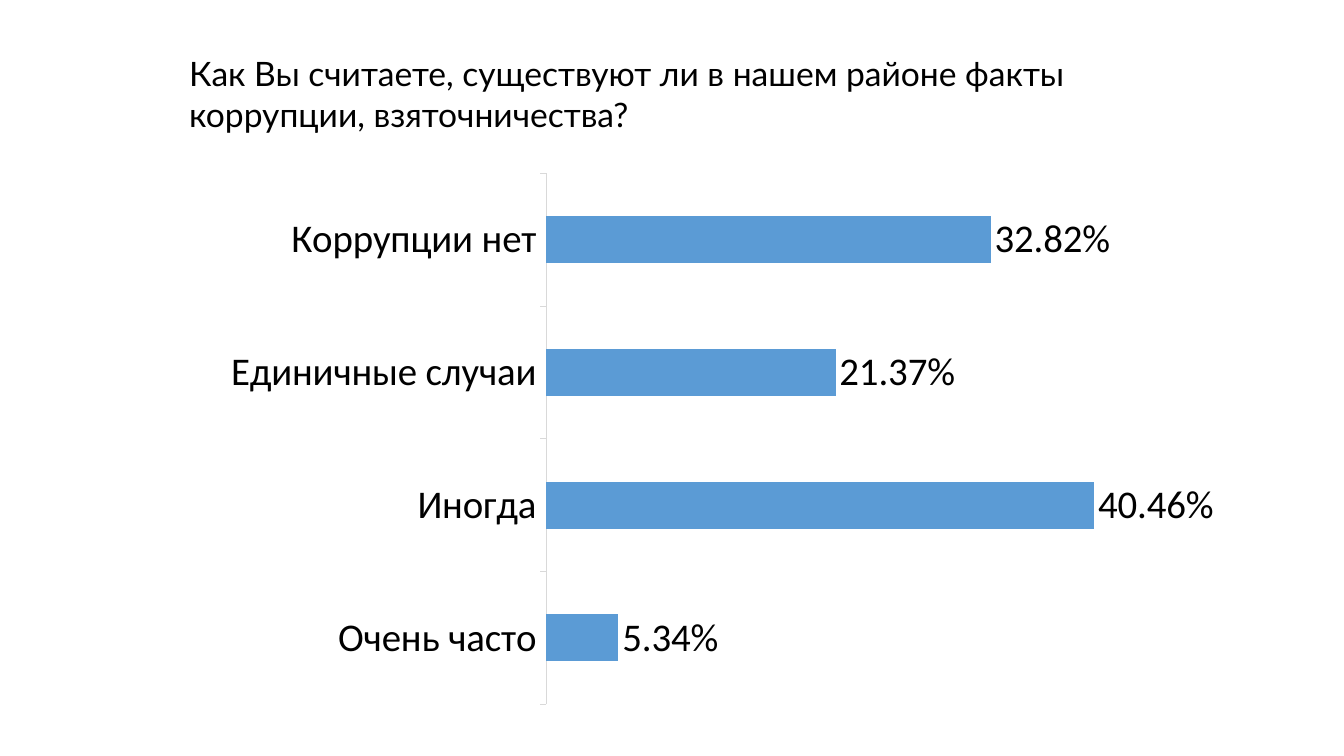
from lxml import etree
from pptx import Presentation
from pptx.chart.data import CategoryChartData as Data
from pptx.dml.color import RGBColor
from pptx.enum.chart import XL_CHART_TYPE as Kind, XL_LABEL_POSITION as Spot, XL_TICK_MARK as Tick
from pptx.oxml.ns import qn
from pptx.util import Cm, Pt

BLACK = RGBColor(0x00, 0x00, 0x00)
BLUE = RGBColor(0x5B, 0x9B, 0xD5)
GREY = RGBColor(0xD9, 0xD9, 0xD9)
PERCENT = "0.00%"


def style(item, values):
    for name, value in values.items():
        setattr(item, name, value)


def set_font(font, face, size):
    style(font, {"name": face, "size": Pt(size)})
    font.color.rgb = BLACK


# Slide
deck = Presentation()
style(deck, {"slide_width": Cm(33.87), "slide_height": Cm(19.05)})
slide = deck.slides.add_slide(deck.slide_layouts[6])

# Question
box = slide.shapes.add_textbox(Cm(4.52), Cm(1.22), Cm(26.06), Cm(2.31))
box.text_frame.word_wrap = True
run = box.text_frame.paragraphs[0].add_run()
run.text = "Как Вы считаете, существуют ли в нашем районе факты коррупции, взяточничества?"
set_font(run.font, "Lato", 24)

# Answers
answers = {
    "Очень часто": 0.0534,
    "Иногда": 0.4046,
    "Единичные случаи": 0.2137,
    "Коррупции нет": 0.3282,
}
data = Data(number_format=PERCENT)
data.categories = list(answers)
data.add_series("Series 1", list(answers.values()))
frame = slide.shapes.add_chart(
    Kind.BAR_CLUSTERED, Cm(5.59), Cm(4.09), Cm(24.99), Cm(13.94), data)
chart = frame.chart
style(chart, {"has_legend": False, "has_title": False})
set_font(chart.font, "Calibri", 28)

# Axes
cats = chart.category_axis
style(cats, {"major_tick_mark": Tick.OUTSIDE, "minor_tick_mark": Tick.NONE,
             "has_major_gridlines": False})
cats.format.line.color.rgb = GREY
cats.format.line.width = Pt(0.75)
set_font(cats.tick_labels.font, "Calibri", 28)
style(chart.value_axis, {"visible": False, "has_major_gridlines": False,
                         "minimum_scale": 0, "maximum_scale": 0.45})

# Bars and labels
plot = chart.plots[0]
style(plot, {"gap_width": 182, "vary_by_categories": False, "has_data_labels": True})
bars = plot.series[0].format.fill
bars.solid()
bars.fore_color.rgb = BLUE
labels = plot.data_labels
style(labels, {"show_value": True, "position": Spot.OUTSIDE_END,
               "number_format": PERCENT, "number_format_is_linked": False})
set_font(labels.font, "Calibri", 28)

# Inner plot area, as shares of the chart frame
area = chart._chartSpace.chart.plotArea
for old in area.findall(qn("c:layout")):
    area.remove(old)
layout = etree.Element(qn("c:layout"))
manual = etree.SubElement(layout, qn("c:manualLayout"))
places = {"layoutTarget": "inner", "xMode": "edge", "yMode": "edge",
          "x": 0.33, "y": 0.02, "w": 0.62, "h": 0.96}
for name, value in places.items():
    etree.SubElement(manual, qn("c:" + name)).set("val", str(value))
area.insert(0, layout)

deck.save("out.pptx")
